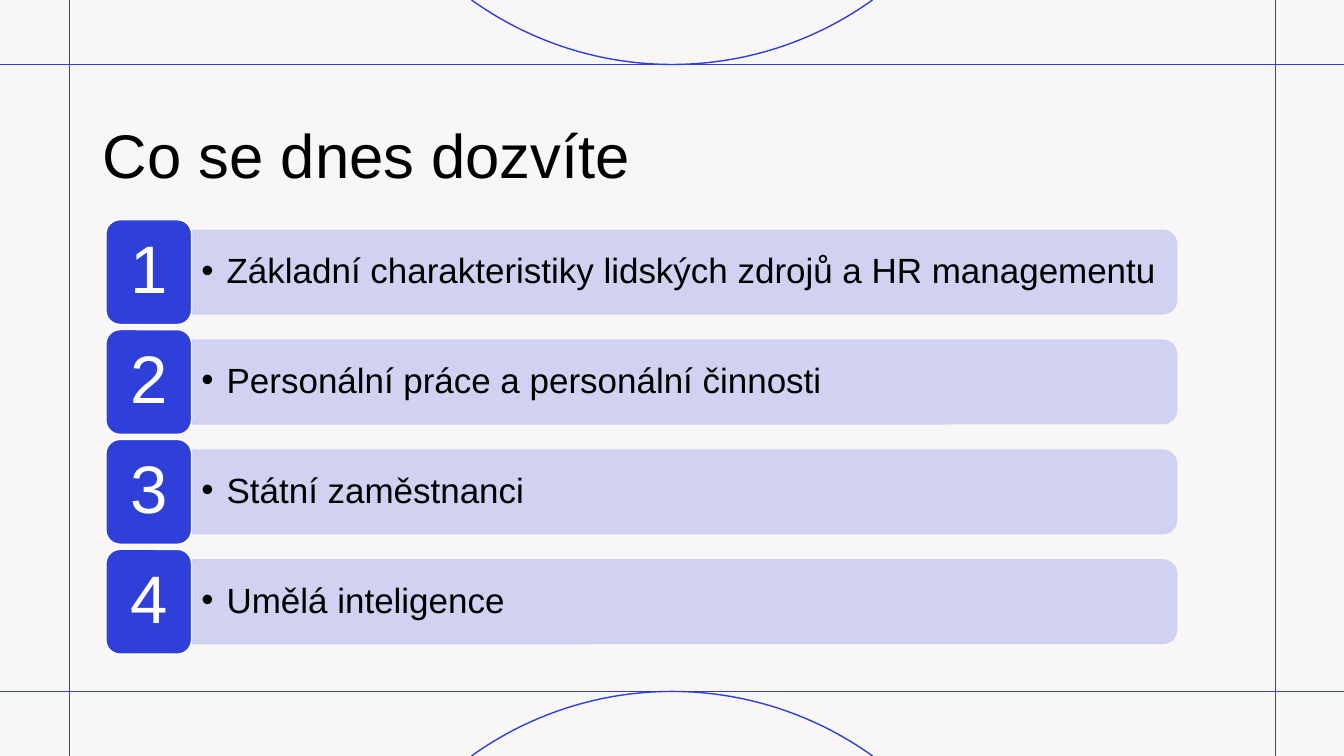
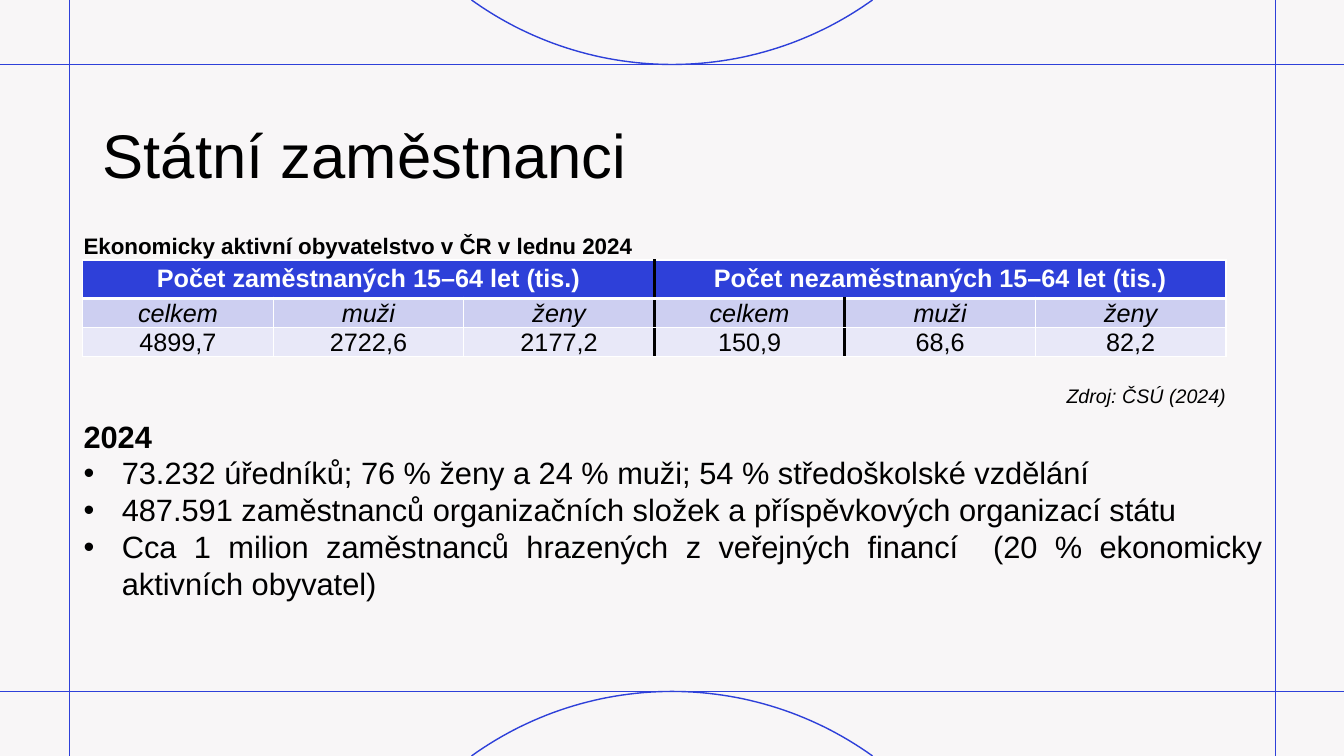
"""Build two slides on state employees inside a shared frame of lines and arcs."""
import math

from lxml import etree
from pptx import Presentation
from pptx import util as u
from pptx.dml.color import RGBColor
from pptx.enum import shapes, text
from pptx.oxml.ns import qn

FONT = "Arial"
BLUE, LILAC, PALE = "2E40D9", "CDCFF1", "E8E8F8"
PAPER, WHITE, BLACK = "F8F6F7", "FFFFFF", "000000"
WIDTH, HEIGHT = 13.33, 7.5
TOP, BOTTOM, LEFT, RIGHT = 0.64, 6.86, 0.69, 12.65
ARC_RADIUS = 3.41

TOPICS = [
    "Základní charakteristiky lidských zdrojů a HR managementu",
    "Personální práce a personální činnosti",
    "Státní zaměstnanci",
    "Umělá inteligence",
]
TOPIC_TOP, TOPIC_STEP = 2.18, 1.09
TILE_W, TILE_H = 0.85, 1.04
BAR_W, BAR_H = 9.77, 0.83

GROUPS = ["Počet zaměstnaných 15–64 let (tis.)", "Počet nezaměstnaných 15–64 let (tis.)"]
COLUMNS = ["celkem", "muži", "ženy"] * 2
VALUES = ["4899,7", "2722,6", "2177,2", "150,9", "68,6", "82,2"]
ROW_HEIGHTS = [0.37, 0.29, 0.29]
COLUMN_W = 1.89
CAPTION = "Ekonomicky aktivní obyvatelstvo v ČR v lednu 2024"
SOURCE = "Zdroj: ČSÚ (2024)"
YEAR = "2024"
FACTS = [
    "73.232 úředníků; 76 % ženy a 24 % muži; 54 % středoškolské vzdělání",
    "487.591 zaměstnanců organizačních složek a příspěvkových organizací státu",
    "Cca 1 milion zaměstnanců hrazených z veřejných financí  (20 % ekonomicky aktivních obyvatel)",
]


def rgb(value):
    return RGBColor.from_string(value)


def box(*lengths):
    return [u.Inches(n) for n in lengths]


def add_run(p, words, size, color=BLACK, bold=False, italic=False):
    r = p.add_run()
    r.text = words
    r.font.name, r.font.size = FONT, u.Pt(size)
    r.font.bold, r.font.italic = bold, italic
    r.font.color.rgb = rgb(color)


def add_bullet(p, indent):
    pPr = p._p.get_or_add_pPr()
    pPr.set("marL", str(u.Inches(indent)))
    pPr.set("indent", str(-u.Inches(indent)))
    etree.SubElement(pPr, qn("a:buFont"), typeface=FONT)
    etree.SubElement(pPr, qn("a:buChar"), char="•")


def add_textbox(s, place, anchor=text.MSO_ANCHOR.TOP):
    tf = s.shapes.add_textbox(*box(*place)).text_frame
    tf.word_wrap = True
    tf.vertical_anchor = anchor
    return tf


def add_line(s, *ends):
    line = s.shapes.add_connector(shapes.MSO_CONNECTOR.STRAIGHT, *box(*ends))
    line.line.color.rgb, line.line.width = rgb(BLUE), u.Pt(1)
    etree.SubElement(line._element.spPr, qn("a:effectLst"))


def add_arc(s, edge, inward):
    """Draw the visible cap of a circle that touches a horizontal frame line."""
    depth = TOP
    half = math.acos(1 - depth / ARC_RADIUS)
    angles = [half * (i / 30 - 1) for i in range(61)]
    points = [(u.Inches(WIDTH / 2 + ARC_RADIUS * math.sin(a)),
               u.Inches(edge - inward * ARC_RADIUS * (1 - math.cos(a)))) for a in angles]
    builder = s.shapes.build_freeform(*points[0])
    builder.add_line_segments(points[1:], close=False)
    sp = builder.convert_to_shape()
    sp.shadow.inherit = False
    sp.fill.background()
    sp.line.color.rgb, sp.line.width = rgb(BLUE), u.Pt(1)


def add_slide(prs, title, title_width):
    s = prs.slides.add_slide(prs.slide_layouts[5])
    for y in (BOTTOM, TOP):
        add_line(s, 0, y, WIDTH, y)
    for x in (RIGHT, LEFT):
        add_line(s, x, HEIGHT, x, 0)
    add_arc(s, TOP, 1)
    add_arc(s, BOTTOM, -1)
    sp = s.shapes.title
    sp.left, sp.top, sp.width, sp.height = box(0.92, 0.8, title_width, 1.45)
    tf = sp.text_frame
    tf.vertical_anchor = text.MSO_ANCHOR.MIDDLE
    p = tf.paragraphs[0]
    p.alignment = text.PP_ALIGN.LEFT
    add_run(p, title, 44)
    return s


def add_block(s, kind, place, fill, line):
    sp = s.shapes.add_shape(kind, *box(*place))
    sp.shadow.inherit = False
    sp.fill.solid()
    sp.fill.fore_color.rgb = rgb(fill)
    sp.line.color.rgb, sp.line.width = rgb(line), u.Pt(1)
    return sp


def add_topic(s, number, words):
    top = TOPIC_TOP + (number - 1) * TOPIC_STEP
    middle = top + TILE_H / 2
    tile_left, bar_left = 1.05, 1.9
    bar = add_block(s, shapes.MSO_SHAPE.ROUND_2_SAME_RECTANGLE,
                    (bar_left + (BAR_W - BAR_H) / 2, middle - BAR_W / 2, BAR_H, BAR_W),
                    LILAC, LILAC)
    bar.rotation = 90
    for color in bar._element.spPr.iter(qn("a:srgbClr")):
        etree.SubElement(color, qn("a:alpha"), val="90000")
    tf = add_textbox(s, (bar_left, middle - 0.375, BAR_W, 0.75), text.MSO_ANCHOR.MIDDLE)
    p = tf.paragraphs[0]
    p.line_spacing = 0.9
    add_bullet(p, 0.25)
    add_run(p, words, 25)

    tile = add_block(s, shapes.MSO_SHAPE.ROUNDED_RECTANGLE,
                     (tile_left, top, TILE_W, TILE_H), BLUE, WHITE)
    tf = tile.text_frame
    tf.vertical_anchor = text.MSO_ANCHOR.MIDDLE
    p = tf.paragraphs[0]
    p.alignment, p.line_spacing = text.PP_ALIGN.CENTER, 0.9
    add_run(p, str(number), 48, WHITE)


def set_borders(cell, borders):
    tcPr = cell._tc.get_or_add_tcPr()
    for i, (side, (color, width)) in enumerate(zip("LRTB", borders)):
        ln = etree.Element(qn("a:ln" + side), w=str(u.Pt(width)))
        fill = etree.SubElement(ln, qn("a:solidFill"))
        etree.SubElement(fill, qn("a:srgbClr"), val=color)
        tcPr.insert(i, ln)


def fill_cell(cell, words, fill, anchor, size=18, **style):
    cell.fill.solid()
    cell.fill.fore_color.rgb = rgb(fill)
    cell.vertical_anchor = anchor
    p = cell.text_frame.paragraphs[0]
    p.alignment = text.PP_ALIGN.CENTER
    add_run(p, words, size, **style)


def add_employment_table(s):
    table = s.shapes.add_table(3, 6, *box(0.82, 2.58, 6 * COLUMN_W, sum(ROW_HEIGHTS))).table
    for column in table.columns:
        column.width = u.Inches(COLUMN_W)
    for row, height in zip(table.rows, ROW_HEIGHTS):
        row.height = u.Inches(height)

    thin, divider, thick = (WHITE, 1), (BLACK, 2.25), (WHITE, 3)
    for i, words in enumerate(GROUPS):
        cell = table.cell(0, 3 * i)
        cell.merge(table.cell(0, 3 * i + 2))
        fill_cell(cell, words, BLUE, text.MSO_ANCHOR.TOP, color=WHITE, bold=True)
        set_borders(cell, [divider if i == 1 else thin, divider if i == 0 else thin, thin, thick])

    body = [(COLUMNS, LILAC, text.MSO_ANCHOR.MIDDLE, True),
            (VALUES, PALE, text.MSO_ANCHOR.BOTTOM, False)]
    for row, (words, fill, anchor, italic) in enumerate(body, 1):
        for col, word in enumerate(words):
            cell = table.cell(row, col)
            cell.margin_left = cell.margin_right = cell.margin_top = u.Inches(0.01)
            cell.margin_bottom = 0
            fill_cell(cell, word, fill, anchor, italic=italic)
            sides = [divider if edge in (3, 4) else thin for edge in (col, col + 1)]
            set_borders(cell, sides + [thick if row == 1 else thin, thin])


def add_facts(s):
    tf = add_textbox(s, (0.73, 4.09, 11.89, 1.95))
    for i, words in enumerate([YEAR] + FACTS):
        p = tf.add_paragraph() if i else tf.paragraphs[0]
        p.alignment, p.line_spacing = text.PP_ALIGN.JUSTIFY, u.Pt(26.4)
        if i:
            add_bullet(p, 0.38)
        add_run(p, words, 22, bold=i == 0)


def main():
    prs = Presentation()
    prs.slide_width, prs.slide_height = box(WIDTH, HEIGHT)
    background = prs.slide_master.background.fill
    background.solid()
    background.fore_color.rgb = rgb(PAPER)

    s = add_slide(prs, "Co se dnes dozvíte", 11.5)
    for number, words in enumerate(TOPICS, 1):
        add_topic(s, number, words)

    s = add_slide(prs, "Státní zaměstnanci", 12.41)
    add_employment_table(s)
    add_run(add_textbox(s, (0.73, 2.25, 6.35, 0.37)).paragraphs[0], CAPTION, 16, bold=True)
    add_run(add_textbox(s, (10.48, 3.76, 1.94, 0.34)).paragraphs[0], SOURCE, 14, italic=True)
    add_facts(s)
    prs.save("out.pptx")


if __name__ == "__main__":
    main()
